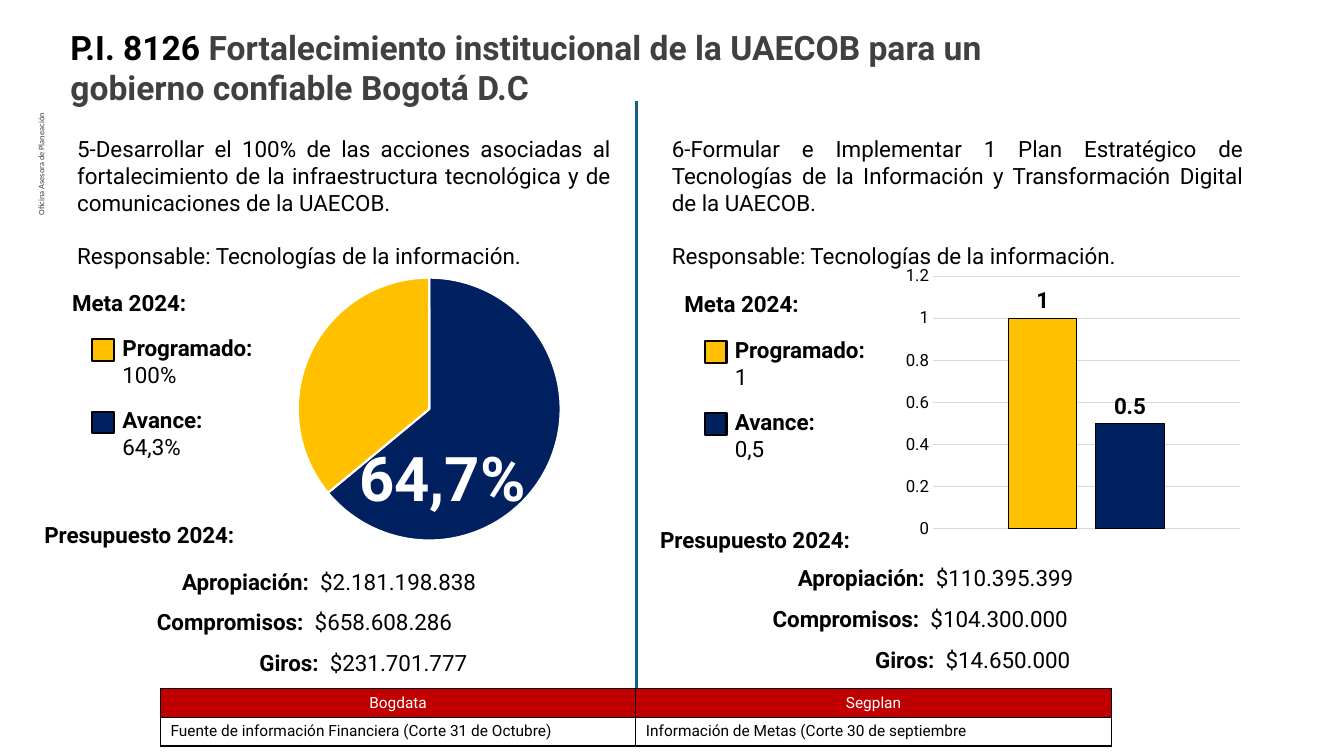
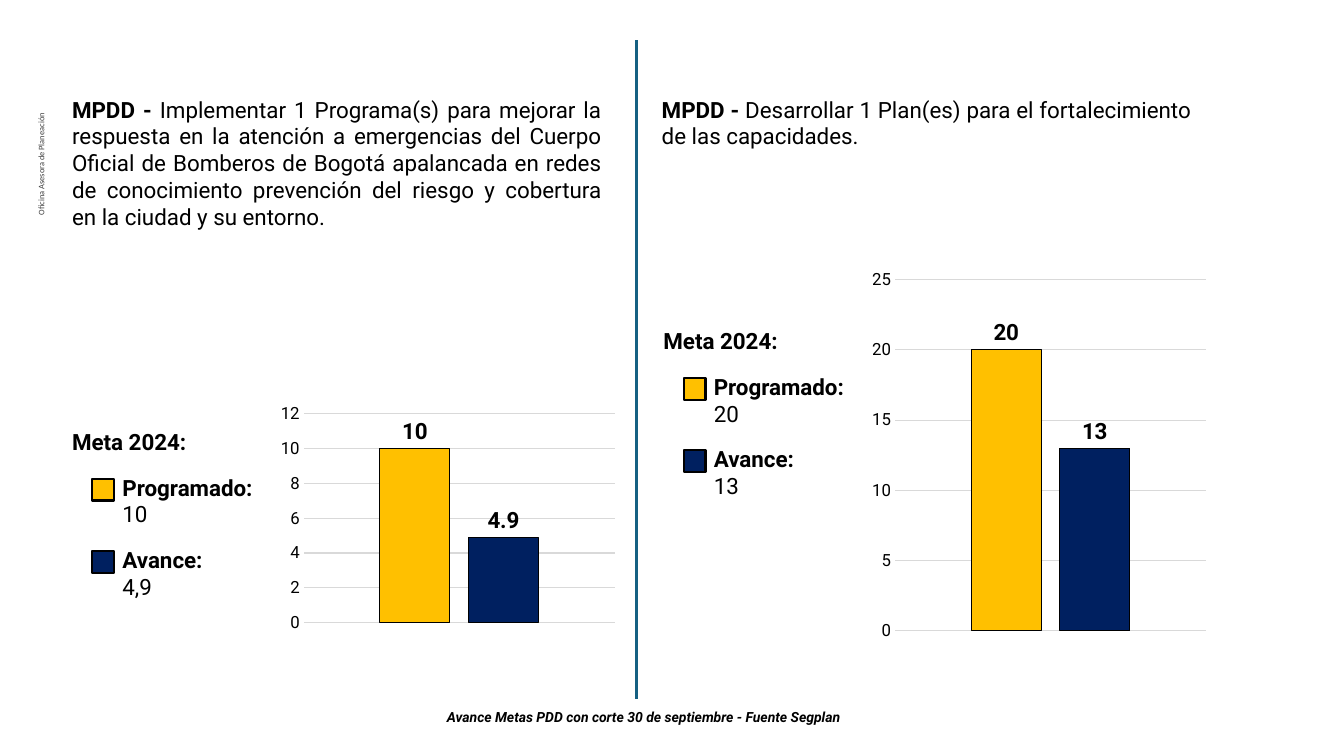
from lxml import etree
from pptx import Presentation
from pptx.chart.data import CategoryChartData
from pptx.dml.color import RGBColor
from pptx.enum.chart import XL_CHART_TYPE as ChartType, XL_LABEL_POSITION as LabelPos
from pptx.enum.chart import XL_TICK_MARK as Tick
from pptx.enum.shapes import MSO_CONNECTOR as Connector, MSO_SHAPE as Shape
from pptx.enum.text import MSO_AUTO_SIZE as AutoSize, PP_ALIGN as Align
from pptx.oxml import parse_xml
from pptx.oxml.ns import nsdecls, qn
from pptx.util import Inches, Pt

# Grid: 80 columns by 45 rows of square cells
CELL = Inches(1 / 6)
COLUMNS, ROWS = 80, 45

FONT, SIDE_FONT = "Roboto", "Calibri"
BODY = 16
BLACK = RGBColor(0x00, 0x00, 0x00)
WHITE = RGBColor(0xFF, 0xFF, 0xFF)
GRAY = RGBColor(0x40, 0x40, 0x40)
GRID_GRAY = RGBColor(0xD9, 0xD9, 0xD9)
YELLOW = RGBColor(0xFF, 0xC0, 0x00)
NAVY = RGBColor(0x00, 0x20, 0x60)
RED = RGBColor(0xC0, 0x00, 0x00)
TEAL = RGBColor(0x15, 0x60, 0x82)


def cells(*counts):
    return [round(count * CELL) for count in counts]


def style(font, size=BODY, color=BLACK, bold=False, italic=False, name=FONT):
    font.name, font.size = name, Pt(size)
    font.bold, font.italic = bold, italic
    font.color.rgb = color


def outline(line, color, width):
    line.color.rgb = color
    line.width = Pt(width)


# Text
def add_text(page, frame, lines, align=Align.JUSTIFY, **look):
    """Each line is a list of (text, overrides of the look)."""
    box = page.shapes.add_textbox(*cells(*frame))
    text_frame = box.text_frame
    text_frame.word_wrap = True
    text_frame.auto_size = AutoSize.SHAPE_TO_FIT_TEXT
    for index, line in enumerate(lines):
        para = text_frame.add_paragraph() if index else text_frame.paragraphs[0]
        para.alignment = align
        for text, overrides in line:
            span = para.add_run()
            span.text = text
            style(span.font, **{**look, **overrides})
    return box


def add_side_label(page):
    box = add_text(page, (-5.3, 13.4, 15.5, 1.1),
                   [[("Oficina Asesora de Planeación ", {})]],
                   Align.RIGHT, size=6, color=GRAY, name=SIDE_FONT)
    box.rotation = 270
    frame = box.text_frame
    frame.margin_left = frame.margin_right = Inches(0.07)
    frame.margin_top = frame.margin_bottom = Inches(0.04)


def add_goal_text(page, frame, goal):
    box = add_text(page, frame, [
        [(goal, {})], [("Responsable: Tecnologías de la información.", {})]])
    box.text_frame.paragraphs[1].line_spacing = 2.0


def add_target(page, left, top, planned, progress):
    """Heading with a colour key of the planned and reached values."""
    add_text(page, (left, top, 11.2, 2.2), [[("Meta 2024:", {})]], bold=True)
    entries = [("Programado:", planned, YELLOW), ("Avance:", progress, NAVY)]
    for index, (label, value, color) in enumerate(entries):
        entry_top = top + 2.7 + 4.3 * index
        add_text(page, (left + 3, entry_top, 10.9, 3.8),
                 [[(label, {"bold": True})], [(value, {})]])
        swatch = page.shapes.add_shape(
            Shape.RECTANGLE, *cells(left + 1.8, entry_top + 0.6, 1.3, 1.3))
        swatch.shadow.inherit = False
        swatch.fill.solid()
        swatch.fill.fore_color.rgb = color
        outline(swatch.line, BLACK, 1.5)


def add_budget(page, left, top, first_row, amounts):
    add_text(page, (left, top, 16.3, 2.2), [[("Presupuesto 2024:", {})]], bold=True)
    labels = [("Apropiación: ", 8.2), ("Compromisos: ", 6.7), ("Giros: ", 12.8)]
    for index, ((label, indent), amount) in enumerate(zip(labels, amounts)):
        add_text(page, (left + indent, first_row + 2.43 * index, 23.3, 2.2),
                 [[(label, {"bold": True}), (" " + amount, {})]])


# Charts
def add_chart(page, frame, kind, categories, series):
    data = CategoryChartData()
    data.categories = categories
    for index, values in enumerate(series, 1):
        data.add_series(f"Series {index}", values)
    chart = page.shapes.add_chart(kind, *cells(*frame), data).chart
    chart.has_legend = chart.has_title = False
    style(chart.font, size=10)
    return chart


def add_pie(page, frame, shares):
    chart = add_chart(page, frame, ChartType.PIE, ["1", "2"], [shares])
    for index, color in enumerate((NAVY, YELLOW)):
        look = chart.plots[0].series[0].points[index].format
        look.fill.solid()
        look.fill.fore_color.rgb = color
        outline(look.line, WHITE, 1.5)


def add_columns(page, frame, planned, progress):
    chart = add_chart(page, frame, ChartType.COLUMN_CLUSTERED, ["1"],
                      [[planned], [progress]])
    chart.category_axis.visible = False
    axis = chart.value_axis
    axis.major_tick_mark = axis.minor_tick_mark = Tick.NONE
    axis.format.line.fill.background()
    outline(axis.major_gridlines.format.line, GRID_GRAY, 0.75)
    style(axis.tick_labels.font, size=12)
    plot = chart.plots[0]
    plot.gap_width, plot.overlap = 219, -27
    plot.vary_by_categories = False
    for series, color in zip(plot.series, (YELLOW, NAVY)):
        series.format.fill.solid()
        series.format.fill.fore_color.rgb = color
        outline(series.format.line, BLACK, 0.75)
        labels = series.data_labels
        labels.show_value = True
        labels.position = LabelPos.OUTSIDE_END
        style(labels.font, bold=True)


# Divider and source table
def add_divider(page, top):
    left, top, bottom = cells(37.9, top, 41.6)
    line = page.shapes.add_connector(Connector.STRAIGHT, left, top, left, bottom)
    outline(line.line, TEAL, 2.25)
    etree.SubElement(line._element.spPr, qn("a:effectLst"))


def add_borders(cell):
    properties = cell._tc.get_or_add_tcPr()
    for index, side in enumerate("LRTB"):
        properties.insert(index, parse_xml(
            f'<a:ln{side} {nsdecls("a")} w="12700"><a:solidFill>'
            f'<a:srgbClr val="{BLACK}"/></a:solidFill></a:ln{side}>'))


def add_sources(page, rows):
    table = page.shapes.add_table(
        len(rows), len(rows[0]), *cells(9.55, 41, 56.6, 3.4)).table
    table.first_row = table.horz_banding = False
    for row_index, row in enumerate(rows):
        header = row_index == 0
        for column_index, text in enumerate(row):
            cell = table.cell(row_index, column_index)
            cell.text = text
            para = cell.text_frame.paragraphs[0]
            para.alignment = Align.CENTER if header else Align.LEFT
            style(para.runs[0].font, size=11, color=WHITE if header else BLACK)
            if header:
                cell.fill.solid()
                cell.fill.fore_color.rgb = RED
            else:
                cell.fill.background()
            add_borders(cell)


def add_page(deck, divider_top):
    page = deck.slides.add_slide(deck.slide_layouts[6])
    add_side_label(page)
    add_divider(page, divider_top)
    return page


def build_project(deck):
    page = add_page(deck, divider_top=6)
    add_text(page, (3.6, 1.3, 61.8, 5.5), [[
        ("P.I. 8126 ", {"color": BLACK}),
        ("Fortalecimiento institucional de la UAECOB para un gobierno "
         "confiable Bogotá D.C", {})]], Align.LEFT, size=24, color=GRAY, bold=True)

    # Left goal
    add_goal_text(page, (4, 7.74, 32.95, 8.2),
                  "5-Desarrollar el 100% de las acciones asociadas al fortalecimiento "
                  "de la infraestructura tecnológica y de comunicaciones de la UAECOB.")
    add_pie(page, (16.9, 15.5, 17.3, 17.7), [64, 36])
    add_text(page, (18.4, 25.9, 15.9, 5), [[("64,7%", {})]],
             Align.CENTER, size=44, color=WHITE, bold=True)
    add_target(page, 3.7, 16.9, "100%", "64,3%")
    add_budget(page, 2.05, 30.7, 33.5,
               ["$2.181.198.838", "$658.608.286", "$231.701.777"])

    # Right goal
    add_goal_text(page, (39.4, 7.74, 35.2, 8.2),
                  "6-Formular e Implementar 1 Plan Estratégico de Tecnologías de la "
                  "Información y Transformación Digital de la UAECOB.")
    add_target(page, 40.15, 17, "1", "0,5")
    add_budget(page, 38.7, 31, 33.3, ["$110.395.399", "$104.300.000", "$14.650.000"])
    add_columns(page, (53.5, 15.5, 20.7, 16.9), 1, 0.5)

    add_sources(page, [
        ["Bogdata", "Segplan"],
        ["Fuente de información Financiera (Corte 31 de Octubre)",
         "Información de Metas (Corte 30 de septiembre"]])


def build_plan(deck):
    page = add_page(deck, divider_top=2.4)
    goals = [
        (3.7, 8.7, " Implementar 1 Programa(s) para mejorar la respuesta en la atención "
         "a emergencias del Cuerpo Oficial de Bomberos de Bogotá apalancada en redes de "
         "conocimiento prevención del riesgo y cobertura en la ciudad y su entorno."),
        (38.8, 3.8, " Desarrollar 1 Plan(es) para el fortalecimiento de las capacidades."),
    ]
    for left, height, goal in goals:
        add_text(page, (left, 5.4, 32.7, height),
                 [[("MPDD -", {"bold": True}), (goal, {})]])
    add_target(page, 3.7, 25.2, "10", "4,9")
    add_columns(page, (16.3, 23.75, 20.7, 14.2), 10, 4.9)
    add_target(page, 38.9, 19.2, "20", "13")
    add_columns(page, (51.5, 15.6, 20.7, 23), 20, 13)
    add_text(page, (22.4, 41.9, 31.8, 1.6),
             [[("Avance Metas PDD con corte 30 de septiembre - Fuente Segplan", {})]],
             Align.CENTER, size=10, bold=True, italic=True)


def main():
    deck = Presentation()
    deck.slide_width, deck.slide_height = cells(COLUMNS, ROWS)
    build_project(deck)
    build_plan(deck)
    deck.save("out.pptx")


if __name__ == "__main__":
    main()
